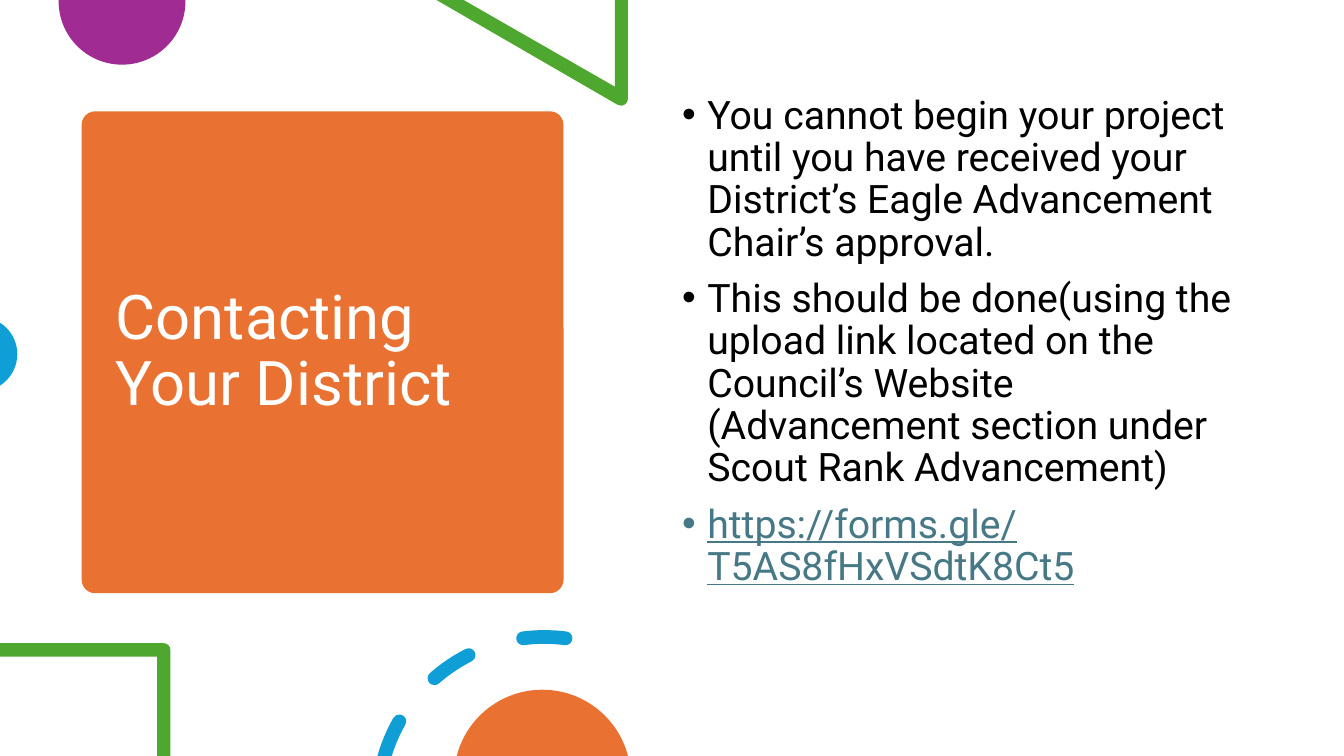
from math import ceil, cos, dist, floor, radians, sin, tan

from pptx import Presentation
from pptx.dml.color import RGBColor
from pptx.enum import shapes, text
from pptx.oxml import parse_xml
from pptx.oxml.ns import nsdecls, qn
from pptx.util import Pt

WIDE, HIGH = 960, 540
FONT = "Roboto"
ORANGE, PURPLE, GREEN, BLUE = "E97132", "A02B93", "4EA72E", "0F9ED5"
WHITE, BLACK, TEAL = "FFFFFF", "000000", "467886"

TITLE = [("Contacting Your District", WHITE, False)]
BODY = [
    ("You cannot begin your project until you have received your "
     "District’s Eagle Advancement Chair’s approval.", BLACK, False),
    ("This should be done(using the upload link located on the Council’s "
     "Website (Advancement section under Scout Rank Advancement)", BLACK, False),
    ("https://forms.gle/T5AS8fHxVSdtK8Ct5", TEAL, True),
]

# A corner is (x, y); an arc is (centre x, centre y, radius, from, to),
# with angles in degrees, clockwise from the right.
DISC = [(132.4, 0), (87.2, 0.9, 45.3, 0, 180), (41.9, 0)]
WEDGE = [(311.8, 0), (331.2, 0), (439.2, 61.9), (439.2, 0), (448.5, 0),
         (443.6, 70.6, 4.9, 0, 120)]
DOT = [(-14.2, 253, 26.6, -57.2, 57.2)]
FRAME = [(0, 459.4), (116.9, 464.2, 4.8, -90, 0), (121.7, HIGH),
         (112.3, HIGH), (112.3, 469.1), (0, 469.1)]
DOME = [(387.4, 555.9, 63.2, -165.4, -14.6)]

RING = (388.8, 574.1, 119.1)
HALF = 4.9
DASHES = [(-131.2, -117), (-97.3, -82.7)]
CUT = (-164.05, -162.6, -150.4)  # outer start, inner start, end


def polar(x, y, r, angle):
    return x + r * cos(radians(angle)), y + r * sin(radians(angle))


def bend(x, y, r, a, b):
    """Bezier points of an arc, split at each quarter turn."""
    low, high = min(a, b), max(a, b)
    stops = [low, *[90 * q for q in range(floor(low / 90) + 1, ceil(high / 90))], high]
    if a > b:
        stops.reverse()
    points = []
    for c, d in zip(stops, stops[1:]):
        k = 4 / 3 * tan(radians(d - c) / 4) * r
        (sx, sy), (ex, ey) = polar(x, y, r, c), polar(x, y, r, d)
        points += [(sx - k * sin(radians(c)), sy + k * cos(radians(c))),
                   (ex + k * sin(radians(d)), ey - k * cos(radians(d))), (ex, ey)]
    return points


def trace(parts):
    """Points of an outline, and for each whether it belongs to a curve."""
    points, curved = [], []
    for part in parts:
        start = part if len(part) == 2 else polar(*part[:4])
        if not points or dist(points[-1], start) > 0.1:
            points.append(start)
            curved.append(False)
        if len(part) == 5:
            arc = bend(*part)
            points += arc
            curved += [True] * len(arc)
    return points, curved


def dash(a, b, inner=None):
    """Outline of a piece of the ring; with inner its start is cut off."""
    x, y, r = RING
    loop = [(x, y, r + HALF, a, b), (*polar(x, y, r, b), HALF, b, b + 180),
            (x, y, r - HALF, b, a if inner is None else inner)]
    if inner is None:
        loop.append((*polar(x, y, r, a), HALF, a + 180, a + 360))
    return loop


def color(code):
    return RGBColor.from_string(code)


def paint(shape, code):
    shape.shadow.inherit = False
    shape.fill.solid()
    shape.fill.fore_color.rgb = color(code)
    shape.line.fill.background()


def draw(code, *loops):
    form, flags = None, []
    for loop in loops:
        points, curved = trace(loop)
        first, *rest = [(Pt(x), Pt(y)) for x, y in points]
        if form is None:
            form = slide.shapes.build_freeform(*first, scale=1.0)
        else:
            form.move_to(*first)
        form.add_line_segments(rest)
        flags += curved[1:]
    shape = form.convert_to_shape()
    lines = list(shape._element.iter(qn("a:lnTo")))
    bent = [line for line, flag in zip(lines, flags) if flag]
    for trio in zip(bent[::3], bent[1::3], bent[2::3]):
        curve = parse_xml(f'<a:cubicBezTo {nsdecls("a")}/>')
        trio[0].addprevious(curve)
        for line in trio:
            curve.append(line[0])
            line.getparent().remove(line)
    paint(shape, code)


def write(lines, box, size, anchor="TOP", bullet=False):
    frame = slide.shapes.add_textbox(*map(Pt, box)).text_frame
    frame.word_wrap = True
    frame.vertical_anchor = text.MSO_ANCHOR[anchor]
    for i, (words, code, under) in enumerate(lines):
        para = frame.paragraphs[0] if i == 0 else frame.add_paragraph()
        para.line_spacing = 0.9
        if i:
            para.space_before = Pt(10)
        if bullet:
            props = para._p.get_or_add_pPr()
            props.set("marL", str(Pt(18)))
            props.set("indent", str(-Pt(18)))
            props.append(parse_xml(f'<a:buFont {nsdecls("a")} typeface="Arial"/>'))
            props.append(parse_xml(f'<a:buChar {nsdecls("a")} char="•"/>'))
        run = para.add_run()
        run.text = words
        run.font.name, run.font.size = FONT, Pt(size)
        run.font.color.rgb = color(code)
        if under:
            run.font.underline = True


deck = Presentation()
deck.slide_width, deck.slide_height = Pt(WIDE), Pt(HIGH)
slide = deck.slides.add_slide(deck.slide_layouts[6])

card = slide.shapes.add_shape(shapes.MSO_SHAPE.ROUNDED_RECTANGLE,
                              Pt(58.3), Pt(79.5), Pt(344.2), Pt(344.2))
card.adjustments[0] = 0.028
paint(card, ORANGE)
write(TITLE, (75.6, 87.8, 310.3, 328.3), 44, anchor="MIDDLE")

draw(PURPLE, DISC)
draw(GREEN, WEDGE)
draw(BLUE, DOT)
write(BODY, (480.2, 64.5, 414, 385.2), 28, bullet=True)
draw(GREEN, FRAME)
start, inner, end = CUT
draw(BLUE, dash(start, end, inner), *[dash(a, b) for a, b in DASHES])
draw(ORANGE, DOME)

deck.save("out.pptx")
